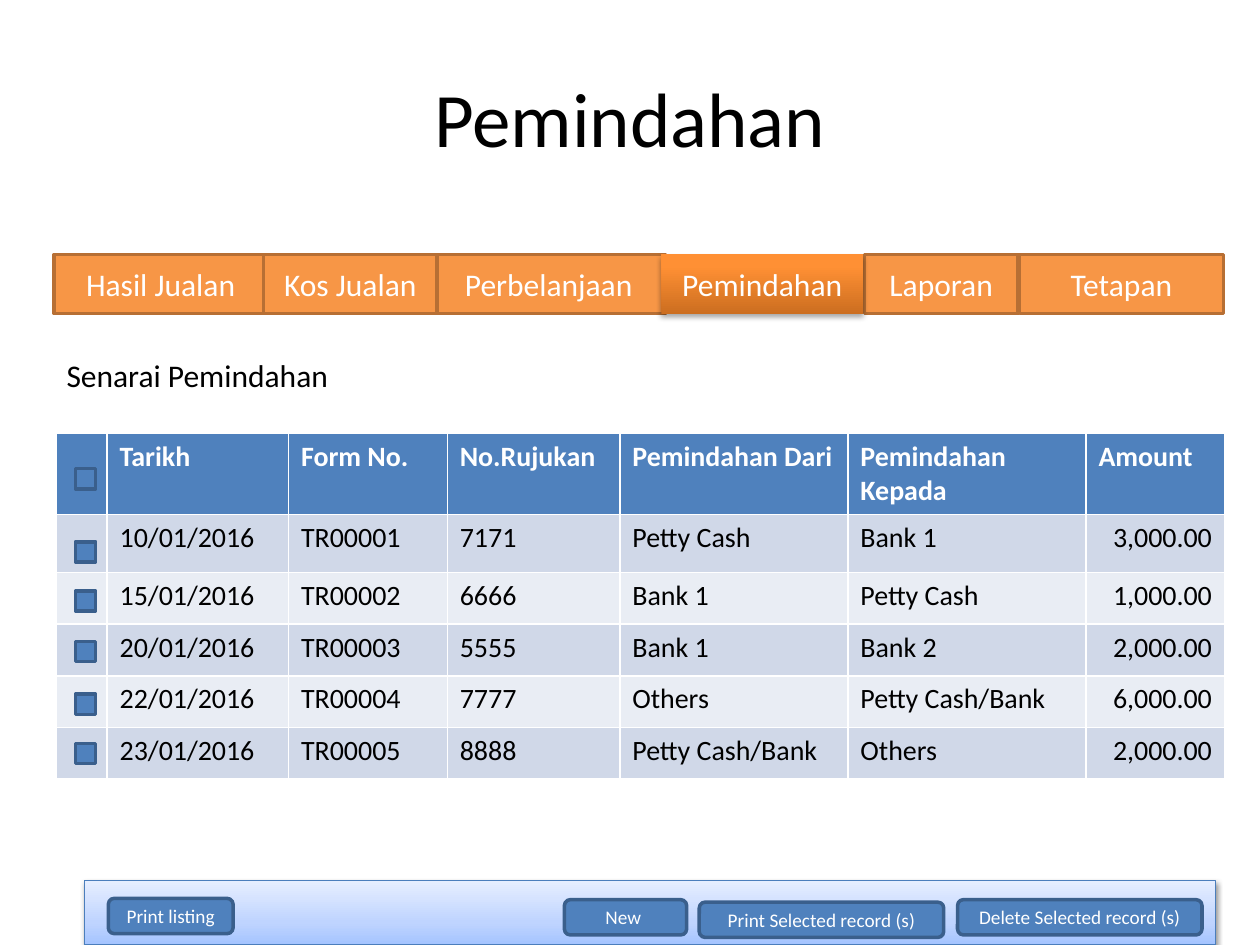
from pptx import Presentation
from pptx.dml.color import RGBColor
from pptx.enum.shapes import MSO_SHAPE
from pptx.enum.text import MSO_ANCHOR, MSO_AUTO_SIZE, PP_ALIGN
from pptx.oxml import parse_xml
from pptx.oxml.ns import nsdecls, qn
from pptx.util import Pt

PX = 9144
FONT = "Calibri"
COLORS = {
    "blue": "4F81BD", "blue_line": "3A5F8C", "bar_line": "4B7EBC",
    "orange": "F79646", "orange_line": "B76F34",
    "odd_row": "D0D8E8", "even_row": "E9EDF4",
    "white": "FFFFFF", "black": "000000",
}
BAR_STOPS = [(0, "A4C4FF"), (35, "BFD4FF"), (100, "E6EEFF")]
TAB_STOPS = [(0, "CC6E20"), (80, "FF9034"), (100, "FF9136")]
TABS = [
    ("Hasil Jualan", 0, 169), ("Perbelanjaan", 300, 185), ("Laporan", 643, 122),
    ("Tetapan", 766, 162), ("Pemindahan", 482, 160), ("Kos Jualan", 166, 138),
]
ACTIVE_TAB = "Pemindahan"
BUTTONS = [
    ("Delete Selected record (s)", 693, 15, 194), ("Print listing", 19, 14, 99),
    ("Print Selected record (s)", 488, 17, 194), ("New ", 381, 15, 97),
]
COLUMN_WIDTHS = [40, 144, 126, 137, 181, 189, 110]
ROW_HEIGHTS = [41, 46, 41, 41, 41, 41]
CHECKBOX_TOPS = [28, 86, 125, 165, 207, 246]
RECORDS = [
    ["Tarikh", "Form No.", "No.Rujukan", "Pemindahan Dari", "Pemindahan Kepada", "Amount"],
    ["10/01/2016", "TR00001", "7171", "Petty Cash", "Bank 1", "3,000.00"],
    ["15/01/2016", "TR00002", "6666", "Bank 1", "Petty Cash", "1,000.00"],
    ["20/01/2016", "TR00003", "5555", "Bank 1", "Bank 2", "2,000.00"],
    ["22/01/2016", "TR00004", "7777", "Others", "Petty Cash/Bank", "6,000.00"],
    ["23/01/2016", "TR00005", "8888", "Petty Cash/Bank", "Others", "2,000.00"],
]


def emu(*lengths):
    """Turn px lengths into EMU."""
    return [length * PX for length in lengths]


def rgb(name):
    """Look up a named colour."""
    return RGBColor.from_string(COLORS[name])


def write(text_frame, text, size, color, align=PP_ALIGN.LEFT, bold=False):
    """Set one paragraph of text and format it."""
    text_frame.text = text
    paragraph = text_frame.paragraphs[0]
    paragraph.alignment = align
    for run in paragraph.runs:
        run.font.name = FONT
        run.font.size = Pt(size)
        run.font.bold = bold
        run.font.color.rgb = rgb(color)


def add_box(shapes, box, fill, line, kind=MSO_SHAPE.RECTANGLE, text="", size=18):
    """Add a filled, outlined shape with centred white text."""
    shape = shapes.add_shape(kind, *emu(*box))
    shape.shadow.inherit = False
    shape.fill.solid()
    shape.fill.fore_color.rgb = rgb(fill)
    shape.line.color.rgb = rgb(line)
    shape.line.width = Pt(2)
    if text:
        shape.text_frame.vertical_anchor = MSO_ANCHOR.MIDDLE
        write(shape.text_frame, text, size, "white", PP_ALIGN.CENTER)
    return shape


def add_glow(shape, stops, opacity, distance):
    """Give a shape an upward gradient and a soft shadow below."""
    shape.fill.gradient()
    properties = shape._element.spPr
    stop_xml = "".join(
        f'<a:gs pos="{position * 1000}"><a:srgbClr val="{color}"/></a:gs>'
        for position, color in stops
    )
    gradient = parse_xml(
        f'<a:gradFill {nsdecls("a")} rotWithShape="1"><a:gsLst>{stop_xml}</a:gsLst>'
        '<a:lin ang="16200000" scaled="0"/></a:gradFill>'
    )
    properties.replace(properties.find(qn("a:gradFill")), gradient)
    properties.find(qn("a:effectLst")).append(parse_xml(
        f'<a:outerShdw {nsdecls("a")} blurRad="40000" dist="{distance}" dir="5400000" '
        f'rotWithShape="0"><a:srgbClr val="{COLORS["black"]}">'
        f'<a:alpha val="{opacity * 1000}"/></a:srgbClr></a:outerShdw>'
    ))


def add_title(slide, box):
    """Place the slide title."""
    title = slide.shapes.title
    title.left, title.top, title.width, title.height = emu(*box)
    title.text_frame.vertical_anchor = MSO_ANCHOR.MIDDLE
    write(title.text_frame, "Pemindahan", 44, "black", PP_ALIGN.CENTER)


def add_action_bar(slide, box):
    """Draw the bottom bar and its buttons."""
    left, top, _, _ = box
    bar = add_box(slide.shapes, box, "blue", "bar_line")
    bar.line.width = Pt(0.75)
    add_glow(bar, BAR_STOPS, 38, 20000)
    for text, x, y, width in BUTTONS:
        add_box(slide.shapes, (left + x, top + y, width, 28), "blue", "blue_line",
                MSO_SHAPE.ROUNDED_RECTANGLE, text, 11)


def add_record_table(slide, box):
    """Draw the transfer table and its column of checkboxes."""
    left, top, _, _ = box
    table = slide.shapes.add_table(len(RECORDS), len(COLUMN_WIDTHS), *emu(*box)).table
    for column, width in zip(table.columns, COLUMN_WIDTHS):
        column.width = width * PX
    for index, (row, height, record) in enumerate(zip(table.rows, ROW_HEIGHTS, RECORDS)):
        row.height = height * PX
        header = index == 0
        fill = "blue" if header else "odd_row" if index % 2 else "even_row"
        for cell, text in zip(row.cells, [""] + record):
            cell.fill.solid()
            cell.fill.fore_color.rgb = rgb(fill)
            amount = text == record[-1] and not header
            write(cell.text_frame, text, 16, "white" if header else "black",
                  PP_ALIGN.RIGHT if amount else PP_ALIGN.LEFT, header)
    for y in CHECKBOX_TOPS:
        add_box(slide.shapes, (left + 15, top + y, 16, 16), "blue", "blue_line")


def add_list_heading(slide, box):
    """Write the heading above the table."""
    text_frame = slide.shapes.add_textbox(*emu(*box)).text_frame
    text_frame.word_wrap = False
    text_frame.auto_size = MSO_AUTO_SIZE.SHAPE_TO_FIT_TEXT
    write(text_frame, "Senarai Pemindahan", 18, "black")


def add_tabs(slide, box):
    """Draw the row of navigation tabs as one group."""
    left, top, _, height = box
    group = slide.shapes.add_group_shape()
    for text, x, width in TABS:
        tab = add_box(group.shapes, (left + x, top, width, height),
                      "orange", "orange_line", text=text)
        if text == ACTIVE_TAB:
            tab.line.fill.background()
            add_glow(tab, TAB_STOPS, 35, 23000)


def main():
    """Build and save the slide."""
    presentation = Presentation()
    presentation.slide_width, presentation.slide_height = emu(1000, 750)
    slide = presentation.slides.add_slide(presentation.slide_layouts[5])
    add_title(slide, (50, 30, 900, 125))
    add_action_bar(slide, (67, 699, 898, 51))
    add_record_table(slide, (45, 344, 927, 251))
    add_list_heading(slide, (43, 278, 230, 40))
    add_tabs(slide, (43, 202, 928, 47))
    presentation.save("out.pptx")


if __name__ == "__main__":
    main()
